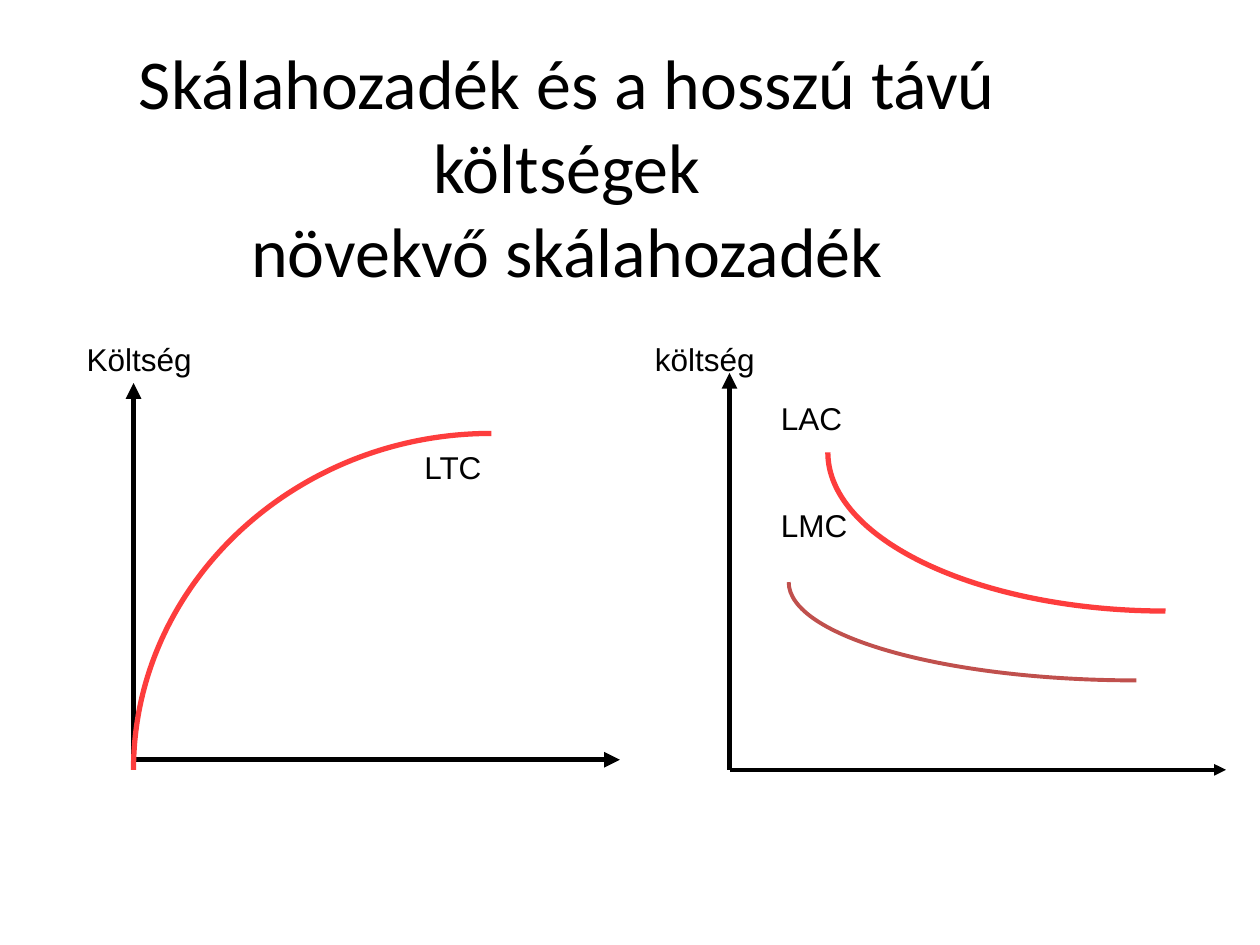
from lxml import etree
from pptx import Presentation
from pptx import util as u
from pptx.dml.color import RGBColor
from pptx.enum import shapes, text
from pptx.oxml.ns import qn

BLACK, RED, BRICK = "000000", "FD3D3D", "C0504D"
BEND = 0.55  # control point distance for a quarter ellipse


def tint(hue):
    return RGBColor.from_string(hue)


def add_text(slide, box, lines, size=18, font="Arial", gap=0, mid=False, tab=None):
    """Add one paragraph per line; gap is the space between them in points."""
    frame = slide.shapes.add_textbox(*map(u.Inches, box)).text_frame
    frame.word_wrap = True
    if mid:
        frame.vertical_anchor = text.MSO_ANCHOR.MIDDLE
    for i, line in enumerate(lines):
        para = frame.add_paragraph() if i else frame.paragraphs[0]
        if tab:
            stops = etree.SubElement(para._p.get_or_add_pPr(), qn("a:tabLst"))
            etree.SubElement(stops, qn("a:tab"), pos=str(u.Inches(tab)), algn="l")
        if mid:
            para.alignment = text.PP_ALIGN.CENTER
        if i:
            para.space_before = u.Pt(gap)
        for j, part in enumerate(line.split("\n")):
            if j:
                para.add_line_break()
            run = para.add_run()
            run.text = part
            run.font.size = u.Pt(size)
            run.font.name = font
            run.font.color.rgb = tint(BLACK)


def add_axis(slide, start, end, width=3):
    axis = slide.shapes.add_connector(
        shapes.MSO_CONNECTOR.STRAIGHT, *map(u.Inches, start + end))
    axis.line.color.rgb = tint(BLACK)
    axis.line.width = u.Pt(width)
    etree.SubElement(axis.line._get_or_add_ln(), qn("a:tailEnd"), type="triangle")
    etree.SubElement(axis._element.spPr, qn("a:effectLst"))


def add_curve(slide, start, end, hue, width=3):
    """Draw a quarter ellipse, level at start and upright at end."""
    (x1, y1), (x2, y2) = start, end
    path = slide.shapes.build_freeform(u.Inches(x1), u.Inches(y1))
    path.add_line_segments([(u.Inches(x2), u.Inches(y2))], close=False)
    curve = path.convert_to_shape()

    line = curve._element.spPr.find(".//" + qn("a:lnTo"))
    bow = etree.Element(qn("a:cubicBezTo"))
    left, top = min(x1, x2), min(y1, y2)
    for x, y in ((x1 + BEND * (x2 - x1), y1), (x2, y2 + BEND * (y1 - y2)), end):
        etree.SubElement(bow, qn("a:pt"), x=str(u.Inches(x - left)),
                         y=str(u.Inches(y - top)))
    line.getparent().replace(line, bow)

    curve.shadow.inherit = False
    curve.fill.background()
    curve.line.color.rgb = tint(hue)
    curve.line.width = u.Pt(width)


def main():
    deck = Presentation()
    deck.slide_width, deck.slide_height = u.Inches(10), u.Inches(7.5)
    slide = deck.slides.add_slide(deck.slide_layouts[6])

    add_text(slide, (0, 0.3, 9, 2.03),
             ["Skálahozadék és a hosszú távú költségek\nnövekvő skálahozadék"],
             size=40, font="Calibri", mid=True)

    add_axis(slide, (1.06, 6.11), (1.06, 3.04))
    add_axis(slide, (1.06, 6.03), (4.92, 6.03))
    add_axis(slide, (5.79, 6.11), (5.79, 2.96))
    add_axis(slide, (5.79, 6.11), (9.73, 6.11), 2.25)

    add_text(slide, (0.59, 2.65, 5.83, 0.4), ["Költség\tköltség"], tab=4.51)
    add_text(slide, (3.27, 3.51, 0.87, 0.4), ["LTC"])
    add_text(slide, (6.1, 3.12, 0.87, 1.3), ["LAC", "LMC"], gap=39.3)

    add_curve(slide, (3.9, 3.44), (1.06, 6.11), RED)
    add_curve(slide, (9.25, 4.85), (6.57, 3.59), RED)
    add_curve(slide, (9.02, 5.4), (6.26, 4.62), BRICK, 2.25)

    deck.save("out.pptx")


if __name__ == "__main__":
    main()
